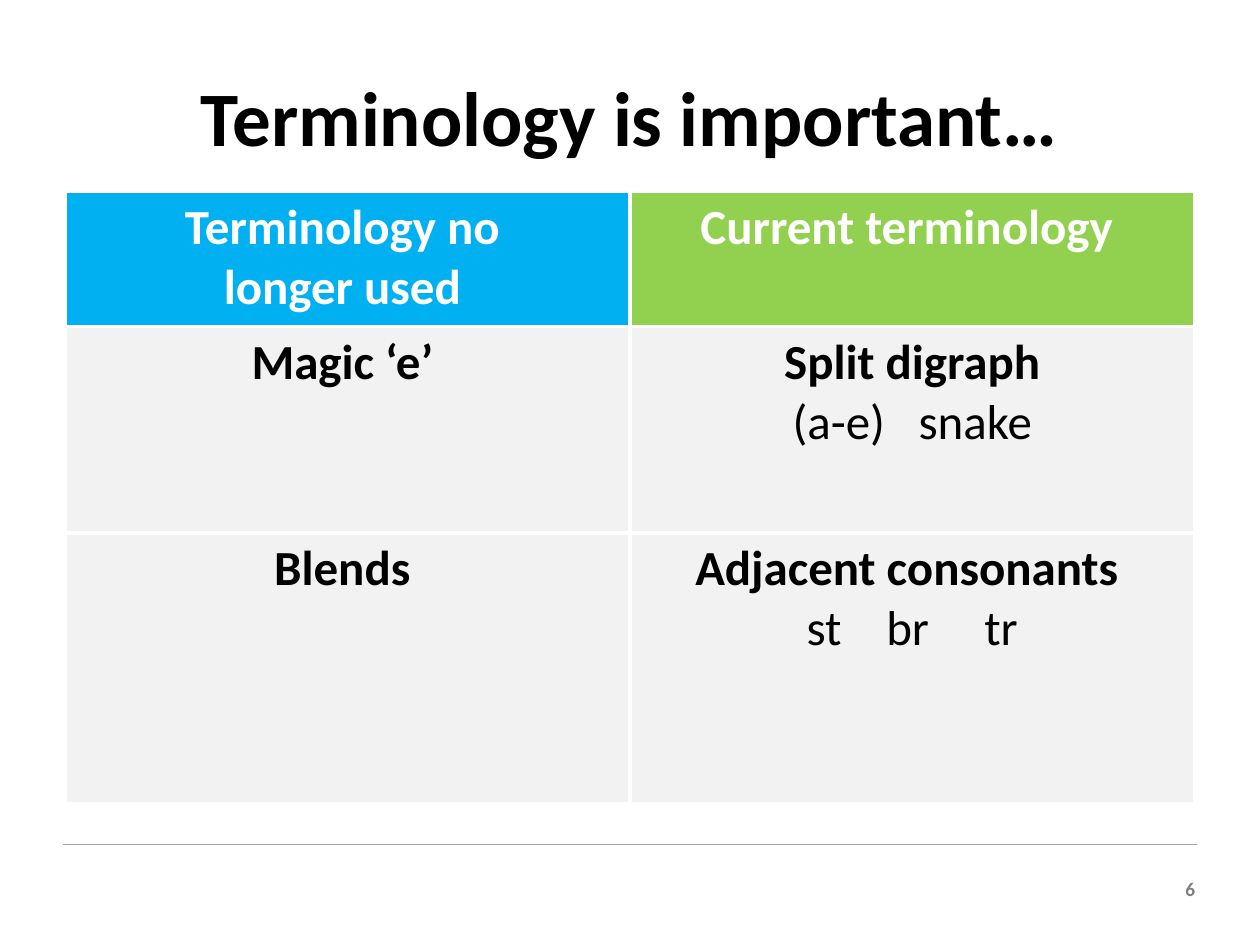
from dataclasses import dataclass

from lxml.etree import SubElement
from pptx import Presentation
from pptx.dml.color import RGBColor
from pptx.enum.shapes import MSO_CONNECTOR
from pptx.enum.text import MSO_ANCHOR, MSO_AUTO_SIZE, PP_ALIGN
from pptx.oxml import parse_xml
from pptx.oxml.ns import nsdecls, qn
from pptx.util import Pt

FONT = "Calibri"
BLACK, WHITE, GREY = "000000", "FFFFFF", "F2F2F2"
BLUE, GREEN = "00B0F0", "92D050"
COLUMN_WIDTH = 322.5
ROW_HEIGHTS = (77, 118, 155)
BORDER_WIDTH = 2.25


@dataclass(frozen=True)
class Line:
    text: str
    bold: bool = True
    tabs: tuple[float, ...] = ()


@dataclass(frozen=True)
class Entry:
    lines: tuple[Line, ...]
    fill: str = GREY
    color: str = BLACK


ROWS = (
    (
        Entry((Line("Terminology no \nlonger used "),), BLUE, WHITE),
        Entry((Line("Current terminology "),), GREEN, WHITE),
    ),
    (
        Entry((Line("Magic ‘e’ "),)),
        Entry((Line("Split digraph"), Line("(a-e)\tsnake", False, (72,)))),
    ),
    (
        Entry((Line("Blends "),)),
        Entry((Line("Adjacent consonants "),
               Line("st\tbr\ttr", False, (45.5, 101.5)))),
    ),
)


def rgb(value: str) -> RGBColor:
    return RGBColor.from_string(value)


def add_text(para, text: str, size: float, color: str, bold: bool = True) -> None:
    """Add one run for each line of text, with line breaks between."""
    for index, part in enumerate(text.split("\n")):
        if index:
            para.add_line_break()
        span = para.add_run()
        span.text = part
        span.font.name = FONT
        span.font.size = Pt(size)
        span.font.bold = bold
        span.font.color.rgb = rgb(color)


def set_tabs(para, positions: tuple[float, ...]) -> None:
    tab_list = SubElement(para._p.get_or_add_pPr(), qn("a:tabLst"))
    for position in positions:
        SubElement(tab_list, qn("a:tab"), pos=str(Pt(position)), algn="l")


def set_borders(cell, color: str, width: float) -> None:
    properties = cell._tc.get_or_add_tcPr()
    for index, side in enumerate(("lnL", "lnR", "lnT", "lnB")):
        properties.insert(index, parse_xml(
            f'<a:{side} {nsdecls("a")} w="{Pt(width)}"><a:solidFill>'
            f'<a:srgbClr val="{color}"/></a:solidFill></a:{side}>'))


def fill_cell(cell, entry: Entry) -> None:
    cell.fill.solid()
    cell.fill.fore_color.rgb = rgb(entry.fill)
    set_borders(cell, WHITE, BORDER_WIDTH)
    frame = cell.text_frame
    for index, line in enumerate(entry.lines):
        para = frame.add_paragraph() if index else frame.paragraphs[0]
        para.alignment = PP_ALIGN.CENTER
        if line.tabs:
            set_tabs(para, line.tabs)
        add_text(para, line.text, 28, entry.color, line.bold)


def add_title(page, text: str) -> None:
    title = page.shapes.title
    title.left, title.top = Pt(49.7), Pt(17.3)
    title.width, title.height = Pt(620.6), Pt(104.4)
    frame = title.text_frame
    frame.auto_size = MSO_AUTO_SIZE.NONE
    frame.vertical_anchor = MSO_ANCHOR.MIDDLE
    para = frame.paragraphs[0]
    para.alignment = PP_ALIGN.CENTER
    para.line_spacing = 0.9
    add_text(para, text, 44, BLACK)


def add_terminology_table(page) -> None:
    table = page.shapes.add_table(
        len(ROWS), len(ROWS[0]), Pt(37.5), Pt(109.5),
        Pt(COLUMN_WIDTH * len(ROWS[0])), Pt(sum(ROW_HEIGHTS))).table
    table.first_row = table.horz_banding = False
    for column in table.columns:
        column.width = Pt(COLUMN_WIDTH)
    for row, height, entries in zip(table.rows, ROW_HEIGHTS, ROWS):
        row.height = Pt(height)
        for cell, entry in zip(row.cells, entries):
            fill_cell(cell, entry)


def add_footer(page, number: str) -> None:
    rule = page.shapes.add_connector(
        MSO_CONNECTOR.STRAIGHT, Pt(36), Pt(482.5), Pt(684), Pt(482.5))
    rule.line.color.rgb = rgb("A5A5A5")
    rule.line.width = Pt(0.75)
    SubElement(rule._element.spPr, qn("a:effectLst"))

    box = page.shapes.add_textbox(Pt(662.5), Pt(497.5), Pt(27.5), Pt(21))
    box.text_frame.word_wrap = True
    para = box.text_frame.paragraphs[0]
    para.alignment = PP_ALIGN.RIGHT
    add_text(para, number, 11, "7F7F7F")


def main() -> None:
    deck = Presentation()
    deck.slide_width, deck.slide_height = Pt(720), Pt(540)
    page = deck.slides.add_slide(deck.slide_layouts.get_by_name("Title Only"))
    add_footer(page, "6")
    add_title(page, "Terminology is important…")
    add_terminology_table(page)
    deck.save("out.pptx")


if __name__ == "__main__":
    main()
